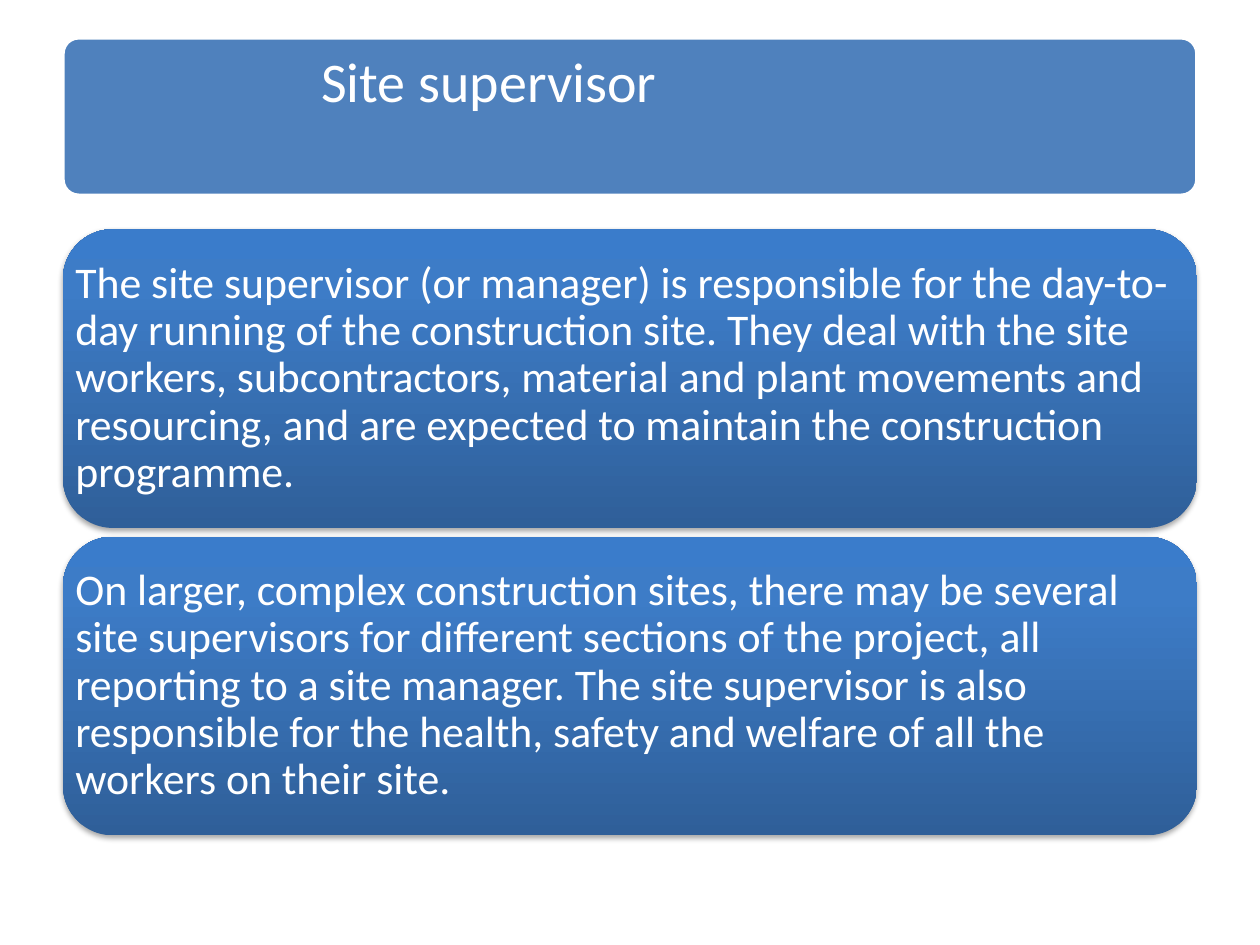
from lxml import etree
from pptx import Presentation
from pptx.dml.color import RGBColor
from pptx.enum.shapes import MSO_SHAPE
from pptx.enum.text import MSO_ANCHOR, PP_ALIGN
from pptx.util import Inches, Pt

ROUNDED = MSO_SHAPE.ROUNDED_RECTANGLE
TOP, MIDDLE = MSO_ANCHOR.TOP, MSO_ANCHOR.MIDDLE
LEFT = PP_ALIGN.LEFT
NS = "http://schemas.openxmlformats.org/drawingml/2006/main"

FONT = "Calibri"
WHITE = "FFFFFF"
BLUE = "4F81BD"
CARD_STOPS = [(0, "2F5F99"), (80, "3D7CC7"), (100, "3A7CCB")]

MARGIN, WIDTH = 0.5, 9
CARD_TOP, CARD_HEIGHT, CARD_GAP = 1.82, 2.37, 0.07
CARDS = [
    "The site supervisor (or manager) is responsible for the day-to-day running "
    "of the construction site. They deal with the site workers, subcontractors, "
    "material and plant movements and resourcing, and are expected to maintain "
    "the construction programme.",
    "On larger, complex construction sites, there may be several site supervisors "
    "for different sections of the project, all reporting to a site manager. "
    "The site supervisor is also responsible for the health, safety and welfare "
    "of all the workers on their site.",
]


def rgb(color):
    return RGBColor.from_string(color)


def add_text(shapes, text, x, y, w, h, size, inset, anchor=MIDDLE, color=WHITE):
    box = shapes.add_textbox(Inches(x), Inches(y), Inches(w), Inches(h))
    tf = box.text_frame
    tf.word_wrap = True
    tf.vertical_anchor = anchor
    tf.margin_left = tf.margin_right = Inches(inset)
    tf.margin_top = tf.margin_bottom = Inches(inset)
    p = tf.paragraphs[0]
    p.alignment = LEFT
    p.line_spacing = 0.9
    r = p.add_run()
    r.text = text
    r.font.name = FONT
    r.font.size = Pt(size)
    r.font.color.rgb = rgb(color)


def add_panel(shapes, y, h):
    sp = shapes.add_shape(ROUNDED, Inches(MARGIN), Inches(y), Inches(WIDTH), Inches(h))
    sp.shadow.inherit = False
    return sp


def fill_gradient(sp, stops):
    """Fill from the bottom edge to the top through any number of stops."""
    sp.fill.gradient()
    sp.fill.gradient_angle = 90
    stop_list = sp.element.spPr.find(f".//{{{NS}}}gsLst")
    for old in list(stop_list):
        stop_list.remove(old)
    for percent, color in stops:
        stop = etree.SubElement(stop_list, f"{{{NS}}}gs", pos=str(percent * 1000))
        etree.SubElement(stop, f"{{{NS}}}srgbClr", val=color)


def add_shadow(sp, color, opacity, blur, distance):
    """Cast a soft shadow straight down."""
    effects = sp.element.spPr.find(f"{{{NS}}}effectLst")
    shadow = etree.SubElement(
        effects, f"{{{NS}}}outerShdw", blurRad=str(Pt(blur)),
        dist=str(Pt(distance)), dir="5400000", rotWithShape="0")
    shade = etree.SubElement(shadow, f"{{{NS}}}srgbClr", val=color)
    etree.SubElement(shade, f"{{{NS}}}alpha", val=str(opacity * 1000))


def add_title(slide, text):
    shapes = slide.shapes.add_group_shape().shapes
    sp = add_panel(shapes, 0.3, 1.25)
    sp.adjustments[0] = 0.1
    sp.fill.solid()
    sp.fill.fore_color.rgb = rgb(BLUE)
    sp.line.color.rgb = rgb(WHITE)
    sp.line.width = Pt(2)
    add_text(shapes, text, 2.42, 0.3, 7.07, 1.25, size=32, inset=0.13, anchor=TOP)


def add_card(slide, text, y):
    shapes = slide.shapes.add_group_shape().shapes
    sp = add_panel(shapes, y, CARD_HEIGHT)
    fill_gradient(sp, CARD_STOPS)
    sp.line.fill.background()
    add_shadow(sp, "000000", opacity=35, blur=3.1, distance=1.8)
    add_text(shapes, text, MARGIN, y, WIDTH, CARD_HEIGHT, size=25, inset=0.1)


def main():
    prs = Presentation()
    prs.slide_width, prs.slide_height = Inches(10), Inches(7.5)
    slide = prs.slides.add_slide(prs.slide_layouts[6])
    add_title(slide, "Site supervisor")
    for i, text in enumerate(CARDS):
        add_card(slide, text, CARD_TOP + i * (CARD_HEIGHT + CARD_GAP))
    prs.save("out.pptx")


if __name__ == "__main__":
    main()
